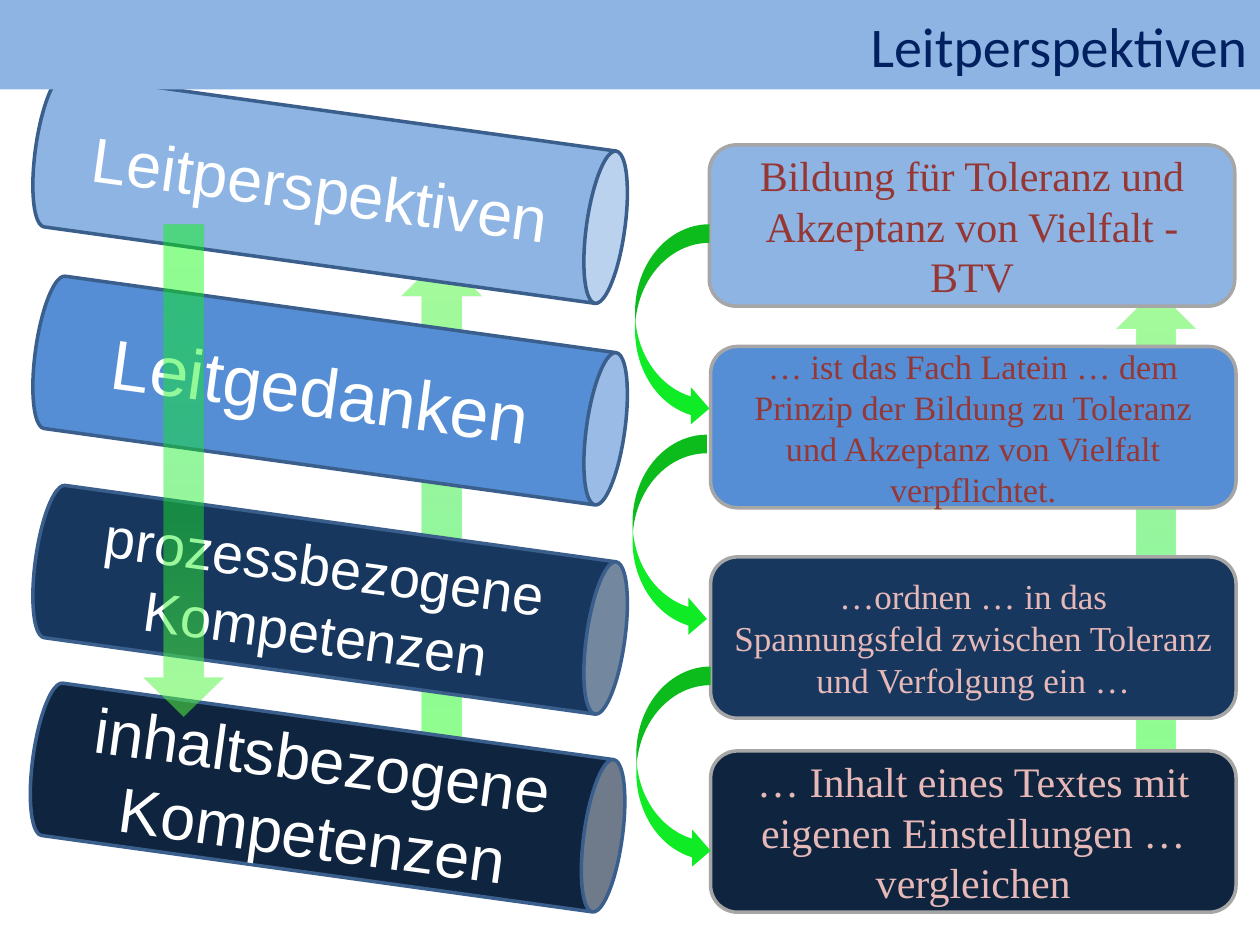
import pptx
import pptx.util
import pptx.dml.color
import pptx.oxml
import pptx.oxml.ns
from pptx.enum.shapes import MSO_SHAPE as KIND
from pptx.enum.text import MSO_ANCHOR, PP_ALIGN

WIDTH, HEIGHT = pptx.util.Inches(10), pptx.util.Inches(7.5)
COLS, ROWS = 100, 75

SKY, BLUE, NAVY, NIGHT = "8EB4E3", "558ED5", "17375E", "0F243E"
RED, PINK = "953735", "E6B9B8"
SERIF = "Times New Roman"

# can left, can top, label, size, box left, box top, note, size, note colour, fill
LEVELS = [
    (20.1, -8.6, "Leitperspektiven", 36, 56.3, 11.5,
     "Bildung für Toleranz und Akzeptanz von Vielfalt - BTV", 24, RED, SKY),
    (20.1, 7.4, "Leitgedanken", 40, 56.4, 27.5,
     "… ist das Fach Latein … dem Prinzip der Bildung zu Toleranz "
     "und Akzeptanz von Vielfalt verpflichtet.", 19.5, RED, BLUE),
    (20.1, 24, "prozessbezogene Kompetenzen", 32, 56.4, 44.2,
     "…ordnen … in das Spannungsfeld zwischen Toleranz und Verfolgung ein …",
     20, PINK, NAVY),
    (19.9, 39.7, "inhaltsbezogene Kompetenzen", 36, 56.4, 59.6,
     "… Inhalt eines Textes mit eigenen Einstellungen … vergleichen",
     24, PINK, NIGHT),
]
CURVES = [(50.4, 17.8), (50.2, 34.5), (50.5, 52.9)]
STOPS = [(0, "00FF00", 44), (50, "0FEB24", 44), (100, "5AF945", 53)]


def color(code):
    return pptx.dml.color.RGBColor.from_string(code)


def place(slide, kind, col, row, wide, high, fill=None, line=None):
    """Add a preset shape, measured in grid columns and rows."""
    shape = slide.shapes.add_shape(
        kind, int(WIDTH * col / COLS), int(HEIGHT * row / ROWS),
        int(WIDTH * wide / COLS), int(HEIGHT * high / ROWS))
    shape.shadow.inherit = False
    if fill:
        shape.fill.solid()
        shape.fill.fore_color.rgb = color(fill)
    if line:
        shape.line.color.rgb = color(line)
        shape.line.width = pptx.util.Pt(2)
    else:
        shape.line.fill.background()
    return shape


def write(shape, text, size, font, ink, align=PP_ALIGN.CENTER):
    frame = shape.text_frame
    frame.word_wrap = True
    frame.vertical_anchor = MSO_ANCHOR.MIDDLE
    para = frame.paragraphs[0]
    para.alignment = align
    run = para.add_run()
    run.text = text
    run.font.size = pptx.util.Pt(size)
    run.font.name = font
    run.font.color.rgb = color(ink)


def glow(shape):
    """Fill with the see-through green gradient."""
    stops = "".join(
        f'<a:gs pos="{pos * 1000}"><a:srgbClr val="{code}">'
        f'<a:alpha val="{alpha * 1000}"/></a:srgbClr></a:gs>'
        for pos, code, alpha in STOPS)
    grad = pptx.oxml.parse_xml(
        f'<a:gradFill {pptx.oxml.ns.nsdecls("a")} rotWithShape="1">'
        f'<a:gsLst>{stops}</a:gsLst><a:lin ang="5400000" scaled="0"/></a:gradFill>')
    shape.fill.background()
    props = shape._element.spPr
    props.replace(props.find(pptx.oxml.ns.qn("a:noFill")), grad)


def arrow(slide, col, row, turn=0):
    shape = place(slide, KIND.DOWN_ARROW, col, row, 6.3, 39.1)
    shape.rotation = turn
    glow(shape)


def can(slide, col, row, text, size, fill):
    shape = place(slide, KIND.CAN, col, row, 12.2, 47.2, fill, "3A5F8C")
    shape.rotation = 97.9
    write(shape, text, size, "Arial", "FFFFFF")
    shape.text_frame._txBody.bodyPr.set("vert", "vert270")


def box(slide, col, row, text, size, ink, fill):
    shape = place(slide, KIND.ROUNDED_RECTANGLE, col, row, 41.7, 12.8,
                  fill, "A6A6A6")
    write(shape, text, size, SERIF, ink)


def main():
    deck = pptx.Presentation()
    deck.slide_width, deck.slide_height = WIDTH, HEIGHT
    slide = deck.slides.add_slide(deck.slide_layouts[6])

    arrow(slide, 88.6, 23, 180)
    arrow(slide, 31.9, 20.4, 180)
    for left, top, label, size, *_, fill in LEVELS:
        can(slide, left, top, label, size, fill)
    arrow(slide, 11.4, 17.8)
    for *_, left, top, note, size, ink, fill in LEVELS:
        box(slide, left, top, note, size, ink, fill)
    for col, row in CURVES:
        place(slide, KIND.CURVED_RIGHT_ARROW, col, row, 5.9, 16.1, "0FEB24")

    bar = place(slide, KIND.RECTANGLE, -0.1, 0, 100.1, 7.1, SKY)
    write(bar, "Leitperspektiven", 32, "Calibri", "002060", PP_ALIGN.RIGHT)
    deck.save("out.pptx")


if __name__ == "__main__":
    main()
